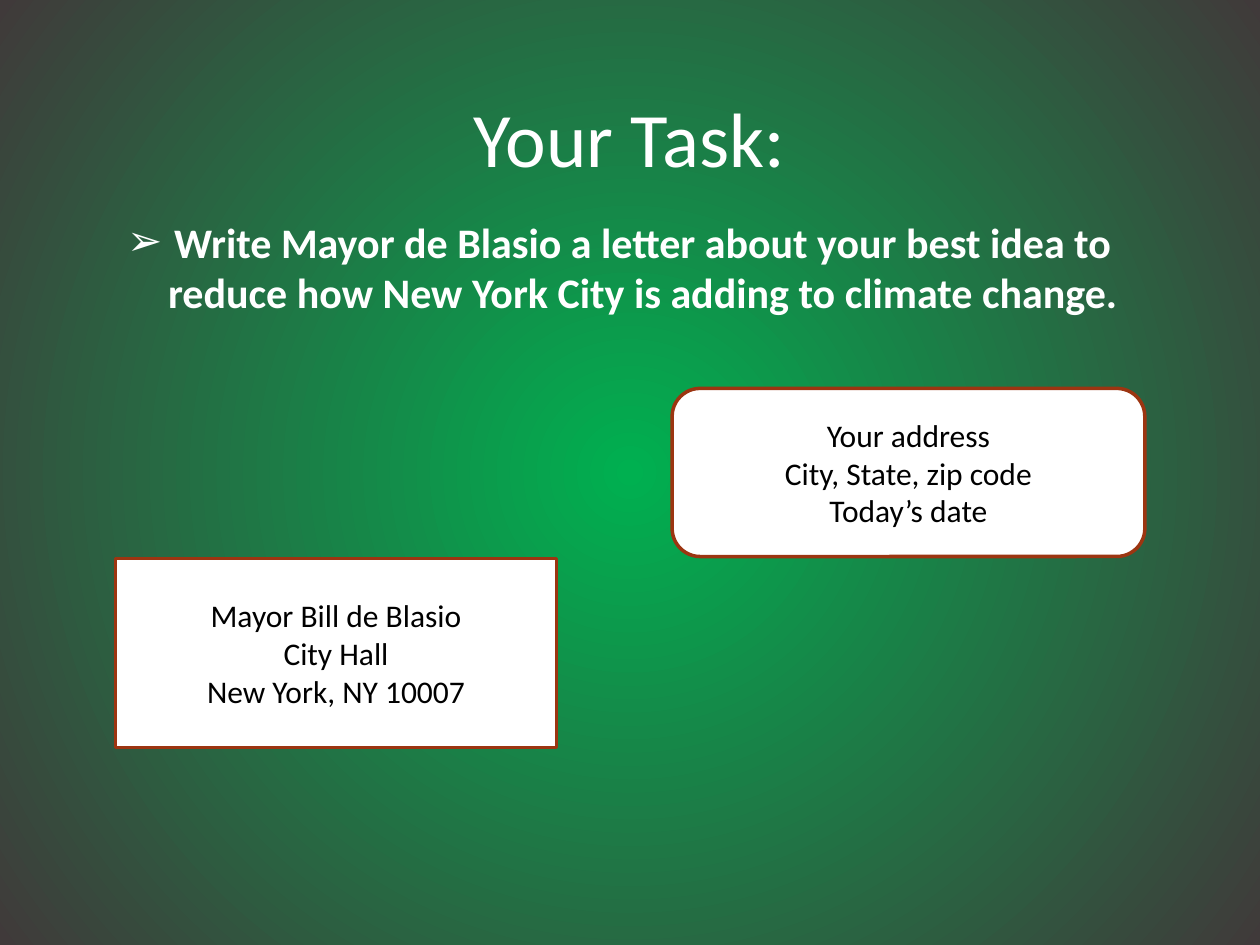
from lxml import etree
from pptx import Presentation
from pptx.dml.color import RGBColor
from pptx.enum.shapes import MSO_SHAPE
from pptx.enum.text import MSO_ANCHOR, PP_ALIGN
from pptx.oxml.ns import qn
from pptx.util import Cm, Pt

RECT, ROUNDED = MSO_SHAPE.RECTANGLE, MSO_SHAPE.ROUNDED_RECTANGLE
MIDDLE, TOP = MSO_ANCHOR.MIDDLE, MSO_ANCHOR.TOP
CENTER = PP_ALIGN.CENTER

TITLE = "Your Task:"
TASK = ("Write Mayor de Blasio a letter about your best idea to "
        "reduce how New York City is adding to climate change.")
ADDRESS_BOXES = [
    (ROUNDED, (13.55, 7.83, 9.53, 3.39),
     ["Your address", "City, State, zip code", "Today’s date"]),
    (RECT, (2.33, 11.26, 8.89, 3.81),
     ["Mayor Bill de Blasio", "City Hall", "New York, NY 10007"]),
]
TITLE_AT = (1.9, 1.27, 21.59, 2.96)
TASK_AT = (1.9, 4.23, 21.17, 12.5)

THEME = {
    "font": "Calibri",
    "glow": "00B050", "edge": "403A3A",
    "light": "FFFFFF", "dark": "000000", "border": "9C3511",
    "title": 44, "task": 24, "address": 18, "line": 2,
}


def color(name):
    return RGBColor.from_string(THEME[name])


def place(sp, box):
    sp.left, sp.top, sp.width, sp.height = map(Cm, box)


def write(sp, lines, size, ink, anchor=MIDDLE, bold=False):
    tf = sp.text_frame
    tf.word_wrap = True
    tf.vertical_anchor = anchor
    for i, line in enumerate(lines):
        p = tf.add_paragraph() if i else tf.paragraphs[0]
        p.alignment = CENTER
        r = p.add_run()
        r.text = line
        r.font.name = THEME["font"]
        r.font.size = Pt(THEME[size])
        r.font.bold = bold
        r.font.color.rgb = color(ink)


def add_bullet(p, char, indent):
    pPr = p._p.get_or_add_pPr()
    pPr.set("marL", str(indent))
    pPr.set("indent", str(-indent))
    etree.SubElement(pPr, qn("a:buFont"), typeface="Arial")
    etree.SubElement(pPr, qn("a:buChar"), char=char)


def paint_background(s):
    fill = s.background.fill
    fill.gradient()
    for stop, position, name in zip(fill.gradient_stops, (0, 1), ("glow", "edge")):
        stop.position = position
        stop.color.rgb = color(name)
    grad = next(s.element.iter(qn("a:gradFill")))
    grad.remove(grad.find(qn("a:lin")))
    circle = etree.SubElement(grad, qn("a:path"), {"path": "circle"})
    etree.SubElement(circle, qn("a:fillToRect"),
                     {side: "50000" for side in "ltrb"})


def add_address(s, kind, box, lines):
    sp = s.shapes.add_shape(kind, *map(Cm, box))
    sp.shadow.inherit = False
    sp.fill.solid()
    sp.fill.fore_color.rgb = color("light")
    sp.line.color.rgb = color("border")
    sp.line.width = Pt(THEME["line"])
    write(sp, lines, "address", "dark")


def main():
    prs = Presentation()
    prs.slide_width, prs.slide_height = Cm(25.4), Cm(19.05)
    s = prs.slides.add_slide(prs.slide_layouts[5])
    paint_background(s)

    title = s.shapes.title
    place(title, TITLE_AT)
    write(title, [TITLE], "title", "light")

    task = s.shapes.add_textbox(*map(Cm, TASK_AT))
    add_bullet(task.text_frame.paragraphs[0], "➢", Cm(0.95))
    write(task, [TASK], "task", "light", TOP, bold=True)

    for kind, box, lines in ADDRESS_BOXES:
        add_address(s, kind, box, lines)
    prs.save("out.pptx")


if __name__ == "__main__":
    main()
